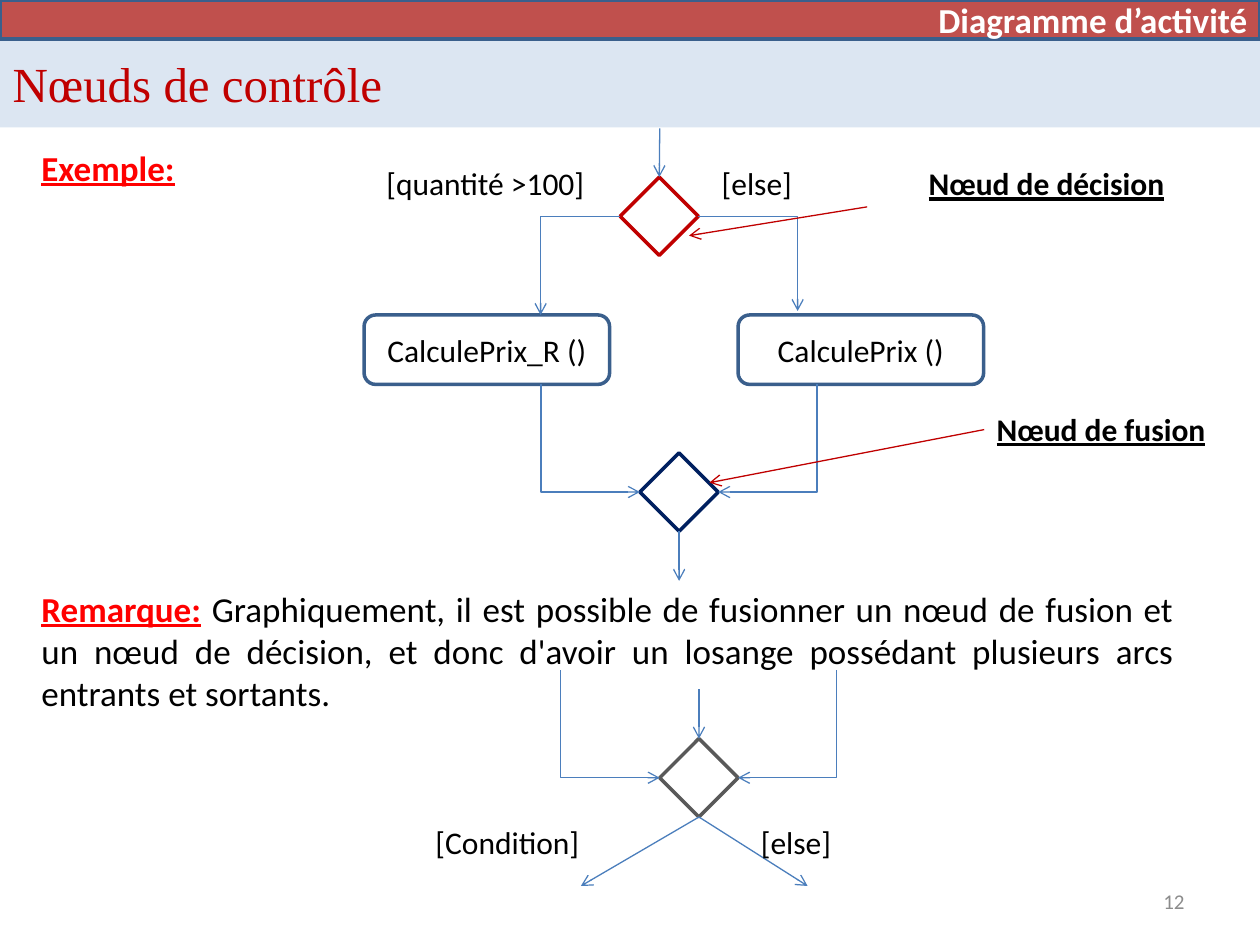
"""Build the slide on control nodes of an activity diagram."""
from lxml import etree
from pptx import Presentation
from pptx.dml.color import RGBColor
from pptx.enum import shapes, text
from pptx.oxml.ns import qn
from pptx.util import Cm, Pt

WHITE = RGBColor(0xFF, 0xFF, 0xFF)
BLACK = RGBColor(0, 0, 0)
RED = RGBColor(0xFF, 0, 0)
DARK_RED = RGBColor(0xC0, 0, 0)
BRICK = RGBColor(0xC0, 0x50, 0x4D)
PALE_BLUE = RGBColor(0xDC, 0xE6, 0xF2)
EDGE_BLUE = RGBColor(0x3A, 0x5F, 0x8C)
ARROW_BLUE = RGBColor(0x4B, 0x7E, 0xBC)
NAVY = RGBColor(0, 0x20, 0x60)
GREY = RGBColor(0x59, 0x59, 0x59)
LIGHT_GREY = RGBColor(0x8C, 0x8C, 0x8C)

TITLE = "Nœuds de contrôle"
REMARK = ("Graphiquement, il est possible de fusionner un nœud de fusion et un nœud de décision, "
          "et donc d'avoir un losange possédant plusieurs arcs entrants et sortants.")

PLAIN = {"name": "Calibri", "size": Pt(18), "bold": False, "underline": False, "color": BLACK}
NODE_NAME = PLAIN | {"bold": True, "underline": True}
BODY = PLAIN | {"size": Pt(20)}
HEADING = NODE_NAME | {"size": Pt(20), "color": RED}
BANNER = BODY | {"bold": True, "color": WHITE}
PAGE_NUMBER = PLAIN | {"size": Pt(12), "color": LIGHT_GREY}
TITLE_FONT = PLAIN | {"name": "Times New Roman", "size": Pt(28), "color": DARK_RED}

LABELS = [
    ("[quantité >100]", 7.54, 3.18, 4.55, PLAIN),
    ("[else]", 14.3, 3.18, 1.93, PLAIN),
    ("[Condition]", 8.53, 16.46, 3.45, PLAIN),
    ("[else]", 15.09, 16.46, 1.93, PLAIN),
    ("Nœud de fusion", 19.84, 8.13, 4.75, NODE_NAME),
    ("Nœud de décision", 18.47, 3.18, 5.31, NODE_NAME),
]
ACTIVITIES = [("CalculePrix ()", 14.88), ("CalculePrix_R ()", 7.34)]
HALF = 0.79
DIAMONDS = [
    {"centre": (13.29, 4.36), "color": DARK_RED, "arrow": "tailEnd",
     "ends": [(10.9, 6.35), (16.08, 6.27)]},
    {"centre": (13.69, 9.92), "color": NAVY, "arrow": "headEnd",
     "ends": [(10.91, 7.74), (16.47, 7.74)]},
    {"centre": (14.09, 15.68), "color": GREY, "arrow": "headEnd",
     "ends": [(11.3, 13.5), (16.87, 13.5)]},
]
ARROWS = [
    ((13.3, 2.59), (13.29, 3.57), ARROW_BLUE),
    ((13.69, 10.71), (13.69, 11.71), ARROW_BLUE),
    ((14.09, 13.89), (14.09, 14.89), ARROW_BLUE),
    ((14.09, 16.47), (11.71, 17.86), ARROW_BLUE),
    ((14.09, 16.47), (16.28, 17.86), ARROW_BLUE),
    ((17.48, 4.17), (13.89, 4.75), DARK_RED),
    ((19.84, 8.66), (14.3, 9.73), DARK_RED),
]


def place(shape, *lengths):
    for side, length in zip(("left", "top", "width", "height"), lengths):
        setattr(shape, side, Cm(length))


def write(para, words, style, align=text.PP_ALIGN.LEFT):
    para.alignment = align
    span = para.add_run()
    span.text = words
    for key, value in style.items():
        if key == "color":
            span.font.color.rgb = value
        else:
            setattr(span.font, key, value)


def add_box(page, kind, lengths, line, fill=None):
    box = page.shapes.add_shape(kind, *map(Cm, lengths))
    box.shadow.inherit = False
    box.line.color.rgb = line
    box.line.width = Pt(2)
    if fill is None:
        box.fill.background()
    else:
        box.fill.solid()
        box.fill.fore_color.rgb = fill
    box.text_frame.vertical_anchor = text.MSO_ANCHOR.MIDDLE
    return box


def add_label(page, words, lengths, style, align=text.PP_ALIGN.LEFT):
    box = page.shapes.add_textbox(*map(Cm, lengths))
    box.text_frame.word_wrap = False
    box.text_frame.vertical_anchor = text.MSO_ANCHOR.MIDDLE
    write(box.text_frame.paragraphs[0], words, style, align)
    return box


def add_arrow(page, start, end, color, arrow="tailEnd", bent=False):
    kind = shapes.MSO_CONNECTOR.ELBOW if bent else shapes.MSO_CONNECTOR.STRAIGHT
    arc = page.shapes.add_connector(kind, *map(Cm, start + end))
    arc.line.color.rgb = color
    arc.line.width = Pt(0.75)
    props = arc._element.spPr
    if bent:
        props.find(qn("a:prstGeom")).set("prst", "bentConnector2")
    etree.SubElement(props.find(qn("a:ln")), qn(f"a:{arrow}"), type="arrow")
    etree.SubElement(props, qn("a:effectLst"))


def fill_title(title):
    place(title, 0, 0.79, 25.4, 1.78)
    title.fill.solid()
    title.fill.fore_color.rgb = PALE_BLUE
    title.text_frame.vertical_anchor = text.MSO_ANCHOR.MIDDLE
    write(title.text_frame.paragraphs[0], TITLE, TITLE_FONT)


def fill_body(body):
    place(body, 0.58, 2.82, 23.34, 14.1)
    frame = body.text_frame
    frame.auto_size = text.MSO_AUTO_SIZE.NONE
    example, remark = frame.paragraphs[0], frame.add_paragraph()
    for para, gap in ((example, 0), (remark, 228)):
        props = para._p.get_or_add_pPr()
        props.set("marL", "0")
        props.set("indent", "0")
        etree.SubElement(props, qn("a:buNone"))
        para.space_before = Pt(gap)
    write(example, "Exemple:", HEADING, text.PP_ALIGN.JUSTIFY)
    write(remark, "Remarque:", HEADING, text.PP_ALIGN.JUSTIFY)
    write(remark, " " + REMARK, BODY, text.PP_ALIGN.JUSTIFY)


def main():
    deck = Presentation()
    deck.slide_width, deck.slide_height = Cm(25.4), Cm(19.05)
    page = deck.slides.add_slide(deck.slide_layouts[1])
    fill_title(page.shapes.title)
    fill_body(page.placeholders[1])

    banner = add_box(page, shapes.MSO_SHAPE.RECTANGLE, (0, 0, 25.4, 0.79), EDGE_BLUE, BRICK)
    write(banner.text_frame.paragraphs[0], "Diagramme d’activité", BANNER, text.PP_ALIGN.RIGHT)
    add_label(page, "12", (18.21, 17.65, 5.92, 1.02), PAGE_NUMBER,
              text.PP_ALIGN.RIGHT).text_frame.word_wrap = True

    for words, left in ACTIVITIES:
        box = add_box(page, shapes.MSO_SHAPE.ROUNDED_RECTANGLE, (left, 6.35, 4.95, 1.4), EDGE_BLUE)
        write(box.text_frame.paragraphs[0], words, PLAIN, text.PP_ALIGN.CENTER)
    for node in DIAMONDS:
        x, y = node["centre"]
        add_box(page, shapes.MSO_SHAPE.DIAMOND, (x - HALF, y - HALF, 2 * HALF, 2 * HALF),
                node["color"])
        for side, end in zip((-HALF, HALF), node["ends"]):
            add_arrow(page, (x + side, y), end, ARROW_BLUE, node["arrow"], bent=True)
    for start, end, color in ARROWS:
        add_arrow(page, start, end, color)
    for words, left, top, width, style in LABELS:
        add_label(page, words, (left, top, width, 1.02), style)
    deck.save("out.pptx")


if __name__ == "__main__":
    main()
